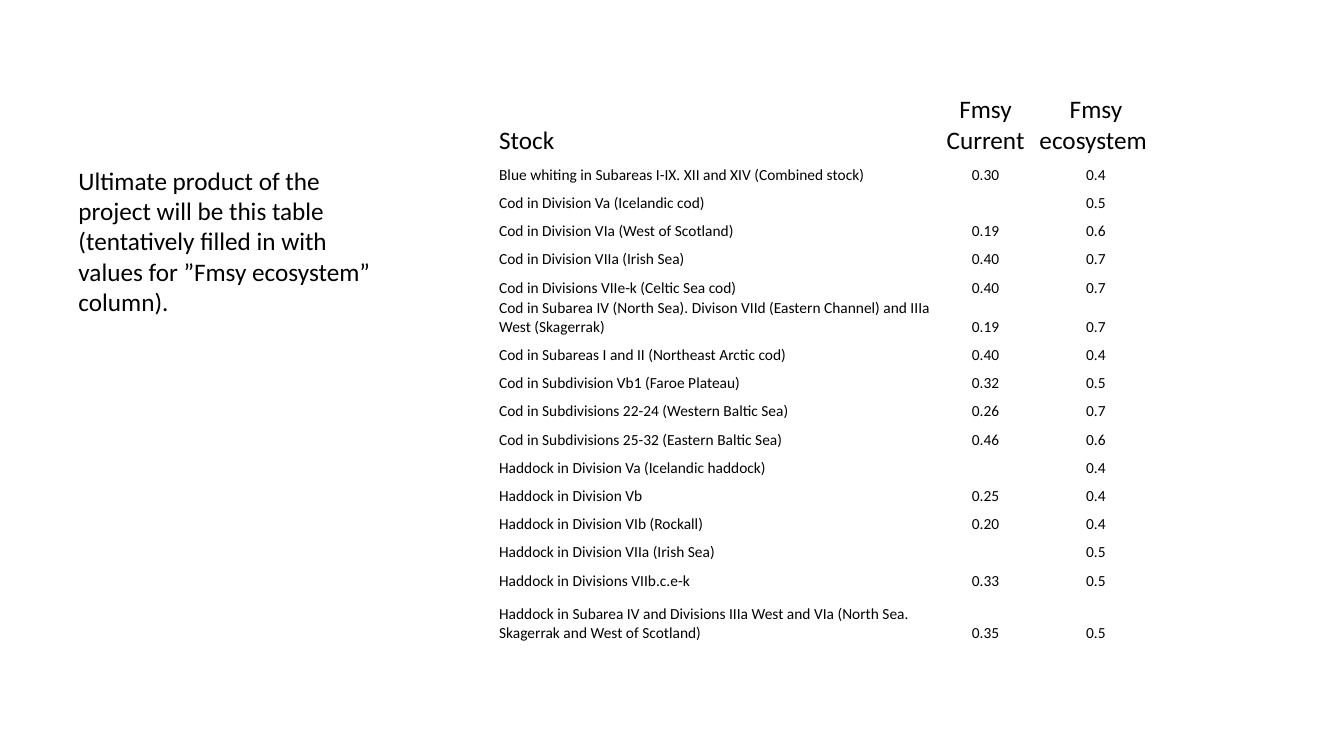
from dataclasses import dataclass

from lxml import etree
from pptx import Presentation
from pptx import util as u
from pptx.dml.color import RGBColor
from pptx.enum import text
from pptx.oxml import ns


@dataclass(frozen=True)
class Theme:
    font: str = "Calibri"
    ink: RGBColor = RGBColor(0, 0, 0)
    large: int = 18
    small: int = 11


theme = Theme()


def style(paragraph, size, align=text.PP_ALIGN.LEFT):
    paragraph.alignment = align
    paragraph.font.name = theme.font
    paragraph.font.size = u.Pt(size)
    paragraph.font.color.rgb = theme.ink


prs = Presentation()
prs.slide_width, prs.slide_height = u.Inches(13.33), u.Inches(7.5)
slide = prs.slides.add_slide(prs.slide_layouts[6])

# Stocks with current and ecosystem Fmsy
header = ("Stock", "Fmsy Current", "Fmsy ecosystem ")
stocks = [
    ("Blue whiting in Subareas I-IX. XII and XIV (Combined stock)", "0.30", "0.4"),
    ("Cod in Division Va (Icelandic cod)", "", "0.5"),
    ("Cod in Division VIa (West of Scotland)", "0.19", "0.6"),
    ("Cod in Division VIIa (Irish Sea)", "0.40", "0.7"),
    ("Cod in Divisions VIIe-k (Celtic Sea cod)", "0.40", "0.7"),
    ("Cod in Subarea IV (North Sea). Divison VIId (Eastern Channel) and IIIa West (Skagerrak)",
     "0.19", "0.7"),
    ("Cod in Subareas I and II (Northeast Arctic cod)", "0.40", "0.4"),
    ("Cod in Subdivision Vb1 (Faroe Plateau)", "0.32", "0.5"),
    ("Cod in Subdivisions 22-24 (Western Baltic Sea)", "0.26", "0.7"),
    ("Cod in Subdivisions 25-32 (Eastern Baltic Sea)", "0.46", "0.6"),
    ("Haddock in Division Va (Icelandic haddock)", "", "0.4"),
    ("Haddock in Division Vb", "0.25", "0.4"),
    ("Haddock in Division VIb (Rockall)", "0.20", "0.4"),
    ("Haddock in Division VIIa (Irish Sea)", "", "0.5"),
    ("Haddock in Divisions VIIb.c.e-k", "0.33", "0.5"),
    ("Haddock in Subarea IV and Divisions IIIa West and VIa (North Sea. Skagerrak and West of Scotland)",
     "0.35", "0.5"),
]
rows = [header, *stocks]
row_heights = [0.65] + [0.28] * (len(stocks) - 1) + [0.52]
column_widths = [4.38, 0.91, 1.28]

# Fmsy table, plain and without banding
fmsy = slide.shapes.add_table(
    len(rows), len(header), u.Inches(4.94), u.Inches(0.9),
    u.Inches(sum(column_widths)), u.Inches(sum(row_heights))).table
fmsy.first_row = fmsy.horz_banding = False
for column, width in zip(fmsy.columns, column_widths):
    column.width = u.Inches(width)

for r, (row, height) in enumerate(zip(rows, row_heights)):
    fmsy.rows[r].height = u.Inches(height)
    size = theme.small if r else theme.large
    for c, value in enumerate(row):
        cell = fmsy.cell(r, c)
        cell.fill.background()
        cell.vertical_anchor = text.MSO_ANCHOR.BOTTOM
        cell.margin_left = cell.margin_right = cell.margin_top = u.Inches(0.01)
        cell.margin_bottom = 0
        cell.text = value
        paragraph = cell.text_frame.paragraphs[0]
        style(paragraph, size, text.PP_ALIGN.CENTER if c else text.PP_ALIGN.LEFT)
        if not value:  # an empty cell keeps the small type size
            etree.SubElement(paragraph._p, ns.qn("a:endParaRPr"), sz=str(size * 100))

# Remark on the left
remark = slide.shapes.add_textbox(
    u.Inches(0.68), u.Inches(1.59), u.Inches(3.28), u.Inches(1.62)).text_frame
remark.word_wrap = True
remark.auto_size = text.MSO_AUTO_SIZE.SHAPE_TO_FIT_TEXT
remark.text = ("Ultimate product of the project will be this table "
               "(tentatively filled in with values for ”Fmsy ecosystem” column).")
style(remark.paragraphs[0], theme.large)

prs.save("out.pptx")
